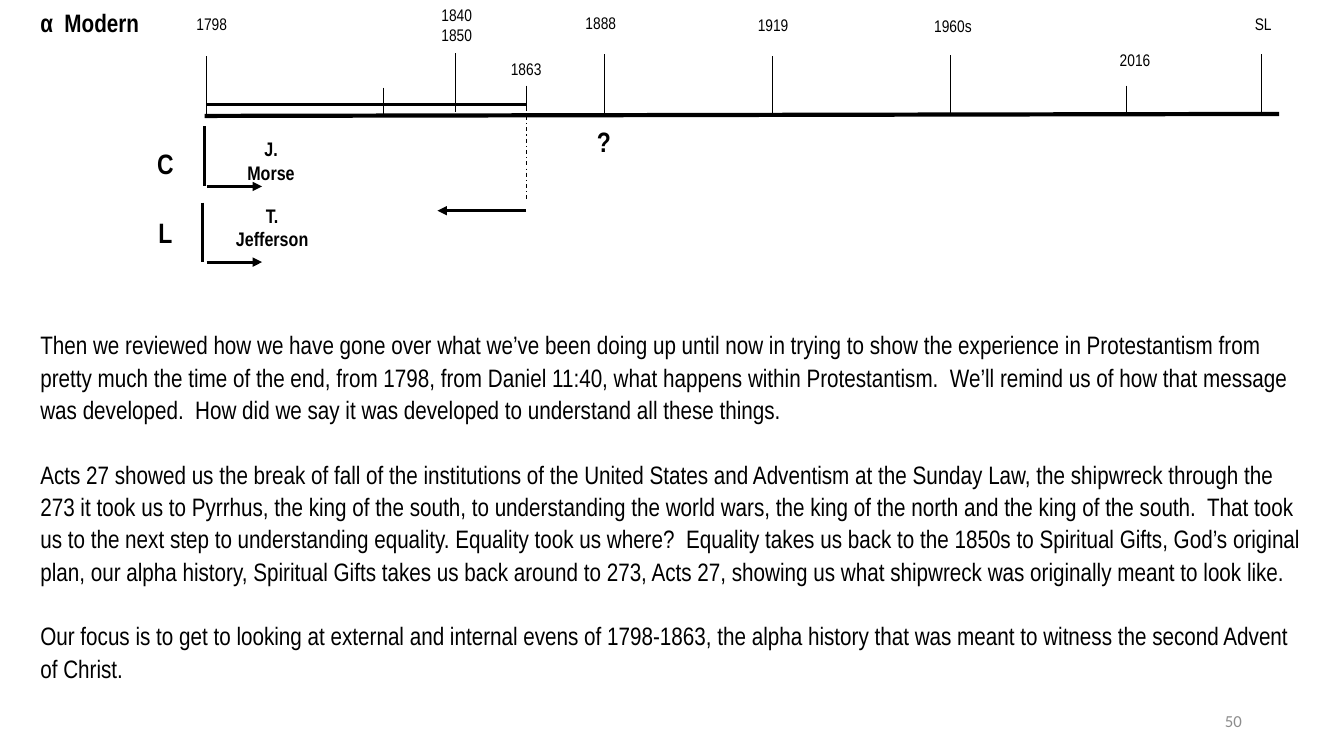
from pptx import Presentation
from pptx.dml.color import RGBColor
from pptx.enum import dml, shapes, text
from pptx.oxml.ns import qn
from pptx.util import Pt
from lxml import etree

COLORS = {"ink": "000000", "number": "8C8C8C"}
FONT = "Arial Narrow"

HEADING = "α  Modern"
BODY = [
    "Then we reviewed how we have gone over what we’ve been doing up until now in trying to show "
    "the experience in Protestantism from pretty much the time of the end, from 1798, from Daniel "
    "11:40, what happens within Protestantism.  We’ll remind us of how that message was developed.  "
    "How did we say it was developed to understand all these things.",
    "Acts 27 showed us the break of fall of the institutions of the United States and Adventism at "
    "the Sunday Law, the shipwreck through the 273 it took us to Pyrrhus, the king of the south, to "
    "understanding the world wars, the king of the north and the king of the south.  That took us to "
    "the next step to understanding equality. Equality took us where?  Equality takes us back to the "
    "1850s to Spiritual Gifts, God’s original plan, our alpha history, Spiritual Gifts takes us back "
    "around to 273, Acts 27, showing us what shipwreck was originally meant to look like.",
    "Our focus is to get to looking at external and internal evens of 1798-1863, the alpha history "
    "that was meant to witness the second Advent of Christ.",
]

# Label lines, label left and top, tick x, tick top, tick length
EVENTS = [
    (["1798"], 133.2, 6.5, 147.6, 40.3, 41.8),
    ([], 0, 0, 273.6, 62.6, 18.8),
    (["1840", "1850"], 308.2, 0, 325.4, 38.2, 41.8),
    (["1863"], 357.8, 38.2, 375.8, 61.2, 18),
    (["1888"], 411.1, 5.8, 432, 38.9, 41.8),
    (["1919"], 534.2, 7.2, 551.5, 40.3, 41.8),
    (["1960s"], 660.2, 7.9, 679, 39.6, 41.8),
    (["2016"], 792.7, 31.7, 805, 61.2, 19.4),
    (["SL"], 889.2, 6.5, 901.4, 38.9, 41.8),
]

# Letter and its top, name lines with left and top, bracket x, top and bottom
TRACKS = [
    ("C", 100.8, ["J.", "Morse"], 159.8, 94.3, 146.2, 90, 133.2),
    ("L", 150.5, ["T.", "Jefferson"], 160.6, 141.8, 144.7, 144.7, 187.2),
]
START, END = 147.6, 375.8  # 1798 and 1863

prs = Presentation()
prs.slide_width, prs.slide_height = Pt(960), Pt(540)
slide = prs.slides.add_slide(prs.slide_layouts[1])


def write(sp, lines, size=12, bold=False, align="LEFT", anchor="TOP", font=FONT,
          color="ink", spacing=1.0, gap=0):
    tf = sp.text_frame
    tf.word_wrap = True
    tf.auto_size = text.MSO_AUTO_SIZE.NONE
    tf.vertical_anchor = text.MSO_ANCHOR[anchor]
    for i, line in enumerate(lines):
        p = tf.paragraphs[0] if i == 0 else tf.add_paragraph()
        p.alignment = text.PP_ALIGN[align]
        p.line_spacing = spacing
        p.space_before = Pt(gap if i else 0)
        r = p.add_run()
        r.text = line
        r.font.name, r.font.size, r.font.bold = font, Pt(size), bold
        r.font.color.rgb = RGBColor.from_string(COLORS[color])


def place(sp, left, top, width, height):
    sp.left, sp.top, sp.width, sp.height = Pt(left), Pt(top), Pt(width), Pt(height)
    return sp


def label(lines, left, top, width, height, **fmt):
    write(slide.shapes.add_textbox(Pt(left), Pt(top), Pt(width), Pt(height)), lines, **fmt)


def line(x1, y1, x2, y2, width=0.75, arrow=False, dash=None):
    cn = slide.shapes.add_connector(shapes.MSO_CONNECTOR.STRAIGHT, Pt(x1), Pt(y1), Pt(x2), Pt(y2))
    cn.line.color.rgb = RGBColor.from_string(COLORS["ink"])
    cn.line.width = Pt(width)
    if dash:
        cn.line.dash_style = dash
    if arrow:
        etree.SubElement(cn.line._get_or_add_ln(), qn("a:tailEnd"), type="triangle")
    etree.SubElement(cn._element.spPr, qn("a:effectLst"))


# Heading and body
write(place(slide.shapes.title, 21.6, 1.4, 103, 29), [HEADING], size=18, bold=True)
body = place(slide.placeholders[1], 21.6, 230.4, 915.8, 285.8)
write(body, BODY, size=18, spacing=1.07, gap=23)
for p in body.text_frame.paragraphs:
    pPr = p._p.get_or_add_pPr()
    pPr.set("marL", "0")
    pPr.set("indent", "0")
    etree.SubElement(pPr, qn("a:buNone"))

# Timeline with dated ticks
line(146.2, 82.8, 913.7, 81.4, width=3)
for lines, left, top, x, y, length in EVENTS:
    line(x, y, x, y + length)
    if lines:
        label(lines, left, top, 54, 7.2 + 14.4 * len(lines))

# Span from 1798 to 1863
line(END, 74.9, START, 74.9, width=2.25)
line(END, 82.8, END, 141.8, dash=dml.MSO_LINE.DASH_DOT)
line(END, 150.5, 312.5, 150.5, width=2.25, arrow=True)
label(["?"], 405.4, 85.7, 51.8, 31.7, size=20, bold=True, align="CENTER")

# Church and state tracks
for letter, letter_top, name, left, top, x, y1, y2 in TRACKS:
    line(x, y1, x, y2, width=2.25)
    line(START, y2, 187.2, y2, width=2.25, arrow=True)
    label([letter], 92.2, letter_top, 51.8, 31.7, size=20, bold=True, align="CENTER")
    label(name, left, top, 67.7, 41, size=14, bold=True, align="CENTER")

# Slide number
label(["50"], 678.2, 500.4, 216, 28.8, align="RIGHT", anchor="MIDDLE",
      font="Calibri", color="number")

prs.save("out.pptx")
